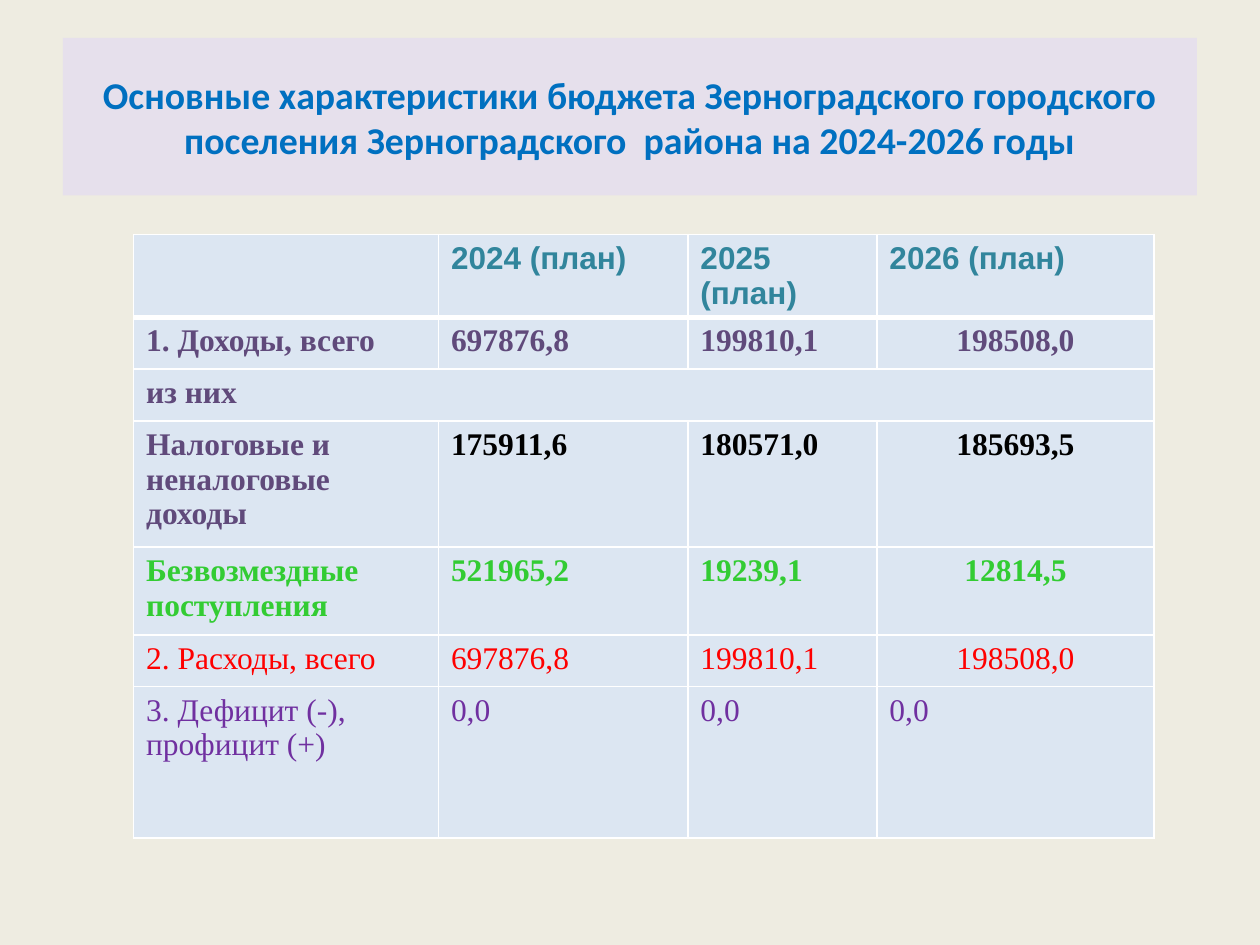
from lxml.etree import SubElement
from pptx import Presentation
from pptx.dml.color import RGBColor
from pptx.enum.shapes import MSO_SHAPE
from pptx.enum.text import MSO_ANCHOR, PP_ALIGN
from pptx.oxml.ns import qn
from pptx.util import Inches, Pt

TITLE = ("Основные характеристики бюджета Зерноградского городского "
         "поселения Зерноградского  района на 2024-2026 годы")
COL_WIDTHS = [2.42, 1.98, 1.5, 2.2]
SERIF = "Times New Roman"
ROWS = [
    (0.41, ["", "2024 (план)", "2025 (план)", "2026 (план)"],
     "Arial", "31859C", "31859C", True, False),
    (0.41, ["1. Доходы, всего", "697876,8", "199810,1", "198508,0"],
     SERIF, "604A7B", "604A7B", True, True),
    (0.41, ["из них"], SERIF, "604A7B", "604A7B", True, False),
    (1, ["Налоговые и неналоговые доходы", "175911,6", "180571,0", "185693,5"],
     SERIF, "604A7B", "000000", True, True),
    (0.7, ["Безвозмездные поступления", "521965,2", "19239,1", "12814,5"],
     SERIF, "33CC33", "33CC33", True, True),
    (0.41, ["2. Расходы, всего", "697876,8", "199810,1", "198508,0"],
     SERIF, "FF0000", "FF0000", False, True),
    (1.2, ["3. Дефицит (-), профицит (+)", "0,0", "0,0", "0,0"],
     SERIF, "7030A0", "7030A0", False, False),
]


def rgb(value):
    return RGBColor.from_string(value)


def paint(fill, color):
    fill.solid()
    fill.fore_color.rgb = rgb(color)


def set_font(font, size, name, color, bold):
    font.size = Pt(size)
    font.name = name
    font.bold = bold
    font.color.rgb = rgb(color)


def write(tf, text, size, name, color, bold, align):
    p = tf.paragraphs[0]
    p.alignment = align
    if not text:
        set_font(p.font, size, name, color, bold)
        return
    r = p.add_run()
    r.text = text
    set_font(r.font, size, name, color, bold)


def set_borders(cell, top, bottom):
    tc_pr = cell._tc.get_or_add_tcPr()
    sides = [("a:lnL", 1), ("a:lnR", 1), ("a:lnT", top), ("a:lnB", bottom)]
    for tag, width in sides:
        ln = SubElement(tc_pr, qn(tag), w=str(Pt(width)))
        SubElement(SubElement(ln, qn("a:solidFill")), qn("a:srgbClr"), val="FFFFFF")


def add_title(s):
    sp = s.shapes.add_shape(MSO_SHAPE.RECTANGLE, Inches(0.5), Inches(0.3),
                            Inches(9), Inches(1.25))
    sp.shadow.inherit = False
    paint(sp.fill, "E6E0EC")
    sp.line.fill.background()
    tf = sp.text_frame
    tf.word_wrap = True
    tf.vertical_anchor = MSO_ANCHOR.MIDDLE
    write(tf, TITLE, 21.6, "Calibri", "0070C0", True, PP_ALIGN.CENTER)


def add_budget_table(s):
    height = sum(row[0] for row in ROWS)
    table = s.shapes.add_table(len(ROWS), len(COL_WIDTHS), Inches(1.06), Inches(1.86),
                               Inches(sum(COL_WIDTHS)), Inches(height)).table
    for col, width in zip(table.columns, COL_WIDTHS):
        col.width = Inches(width)
    for i, (row_height, texts, font, label_color, value_color, bold, centered) in enumerate(ROWS):
        table.rows[i].height = Inches(row_height)
        for j in range(len(COL_WIDTHS)):
            cell = table.cell(i, j)
            set_borders(cell, 3 if i == 1 else 1, 3 if i == 0 else 1)
            paint(cell.fill, "DCE6F2")
            if j < len(texts):
                color = value_color if j else label_color
                align = PP_ALIGN.CENTER if centered and j == 3 else PP_ALIGN.LEFT
                write(cell.text_frame, texts[j], 18, font, color, bold, align)
        if len(texts) == 1:
            table.cell(i, 0).merge(table.cell(i, len(COL_WIDTHS) - 1))


def main():
    prs = Presentation()
    prs.slide_width = Inches(10)
    prs.slide_height = Inches(7.5)
    s = prs.slides.add_slide(prs.slide_layouts[6])
    paint(s.background.fill, "EEECE1")
    add_title(s)
    add_budget_table(s)
    prs.save("out.pptx")


if __name__ == "__main__":
    main()
